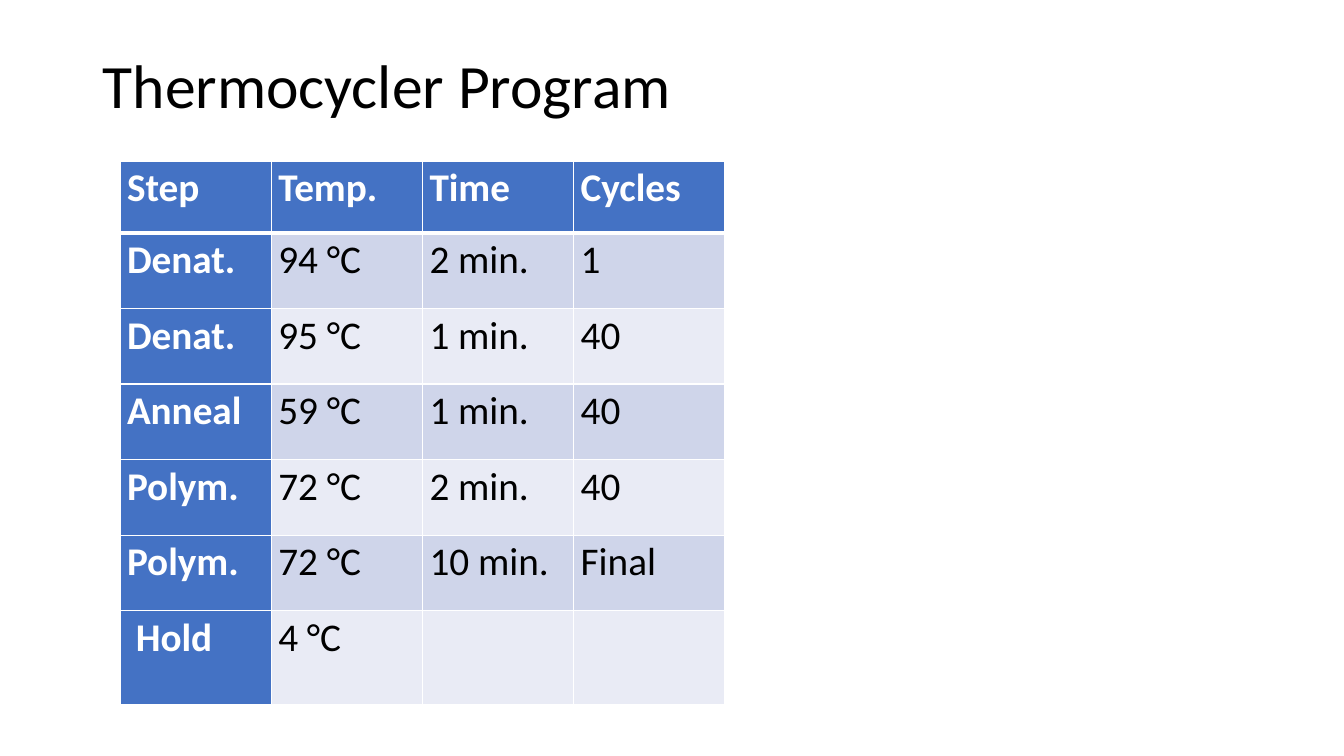
from pptx import Presentation
from pptx import util as u
from pptx.dml.color import RGBColor
from pptx.enum import text
from pptx.oxml import parse_xml
from pptx.oxml.ns import nsdecls

PROGRAM = [
    ["Step", "Temp.", "Time", "Cycles"],
    ["Denat.", "94 °C", "2 min.", "1"],
    ["Denat.", "95 °C", "1 min.", "40"],
    ["Anneal", "59 °C", "1 min.", "40"],
    ["Polym.", "72 °C", "2 min.", "40"],
    ["Polym.", "72 °C", "10 min.", "Final"],
    [" Hold", "4 °C", "", ""],
]
ROW_HEIGHTS = [0.71] + [0.75] * 5 + [0.93]
STEP_WIDTH = 1.5


def color(hex_value):
    return RGBColor.from_string(hex_value)


def set_format(target, values):
    for attribute, value in values.items():
        setattr(target, attribute, value)


class ProgramSlide:
    FONT = "Calibri"
    WHITE, BLACK, ACCENT = "FFFFFF", "000000", "4472C4"
    BANDS = ["E9EBF5", "CFD5EA"]

    def __init__(self, deck):
        self.slide = deck.slides.add_slide(deck.slide_layouts[5])

    def style(self, paragraph, size, hex_value, bold, **spacing):
        set_format(paragraph, {"alignment": text.PP_ALIGN.LEFT, **spacing})
        set_format(paragraph.font, {"name": self.FONT, "size": u.Pt(size), "bold": bold})
        paragraph.font.color.rgb = color(hex_value)

    def title(self, wording, left, top, width, height):
        heading = self.slide.shapes.title
        set_format(heading, {"left": u.Inches(left), "top": u.Inches(top),
                             "width": u.Inches(width), "height": u.Inches(height)})
        frame = heading.text_frame
        frame.text = wording
        set_format(frame, {"vertical_anchor": text.MSO_ANCHOR.MIDDLE,
                           "word_wrap": True,
                           "auto_size": text.MSO_AUTO_SIZE.NONE})
        self.style(frame.paragraphs[0], 44, self.BLACK, False, line_spacing=0.9)

    def border(self, cell, side, points):
        cell._tc.get_or_add_tcPr().append(parse_xml(
            f'<a:{side} {nsdecls("a")} w="{u.Pt(points)}"><a:solidFill>'
            f'<a:srgbClr val="{self.WHITE}"/></a:solidFill></a:{side}>'))

    def cell(self, cell, wording, row, column):
        is_label = row == 0 or column == 0
        for side in ("lnL", "lnR", "lnT", "lnB"):
            under_header = (row, side) in ((0, "lnB"), (1, "lnT"))
            self.border(cell, side, 3 if under_header else 1)
        cell.fill.solid()
        cell.fill.fore_color.rgb = color(self.ACCENT if is_label else self.BANDS[row % 2])
        set_format(cell, {"margin_left": u.Inches(0.07), "margin_right": u.Inches(0.07),
                          "margin_top": 0, "margin_bottom": 0})
        cell.text = wording
        self.style(cell.text_frame.paragraphs[0], 28,
                   self.WHITE if is_label else self.BLACK, is_label,
                   line_spacing=1.07, space_after=u.Pt(8))

    def table(self, entries, left, top, column_width, row_heights):
        columns = len(entries[0])
        table = self.slide.shapes.add_table(
            len(entries), columns, u.Inches(left), u.Inches(top),
            u.Inches(column_width * columns), u.Inches(sum(row_heights))).table
        table.first_col = True
        for column in table.columns:
            column.width = u.Inches(column_width)
        for row, (height, wordings) in enumerate(zip(row_heights, entries)):
            table.rows[row].height = u.Inches(height)
            for column, wording in enumerate(wordings):
                self.cell(table.cell(row, column), wording, row, column)


def main():
    deck = Presentation()
    deck.slide_width, deck.slide_height = u.Inches(13.33), u.Inches(7.5)
    page = ProgramSlide(deck)
    page.title("Thermocycler Program", 0.92, 0.15, 11.5, 1.45)
    page.table(PROGRAM, 1.19, 1.6, STEP_WIDTH, ROW_HEIGHTS)
    deck.save("out.pptx")


if __name__ == "__main__":
    main()
